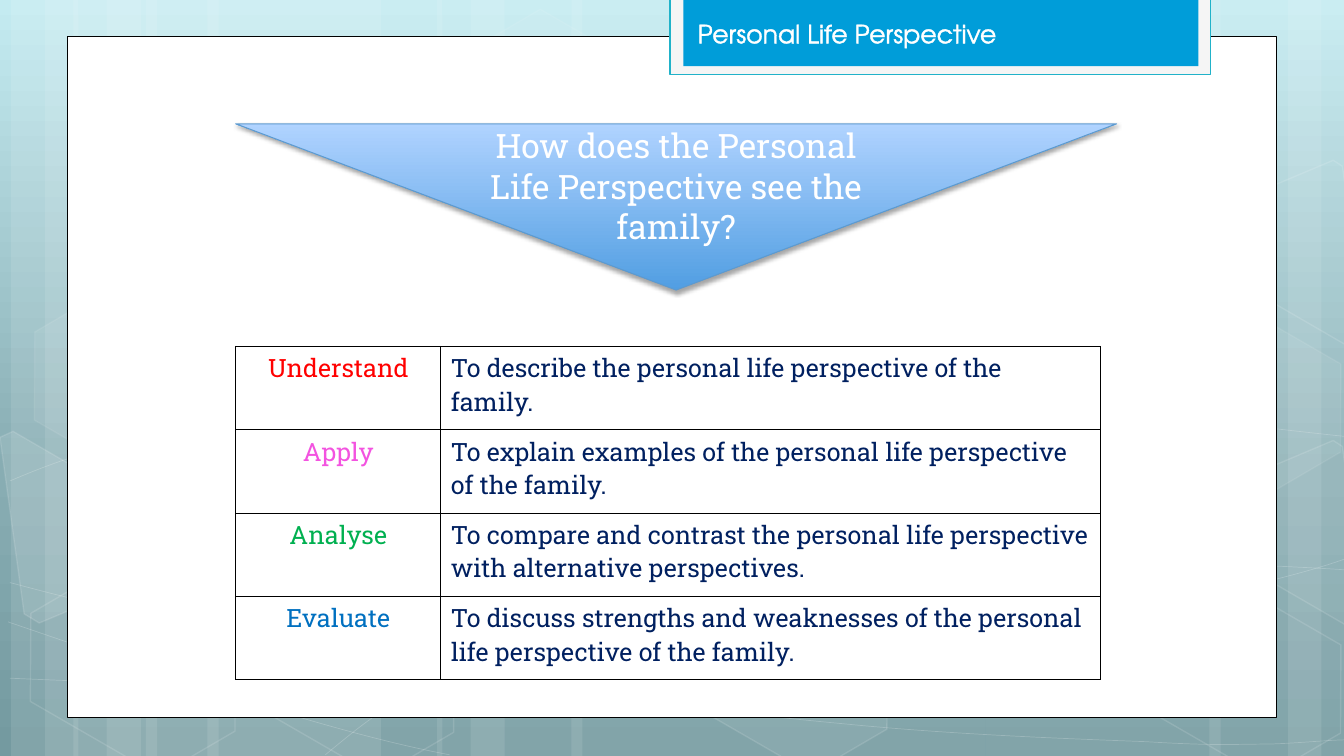
import lxml.etree
import pptx
import pptx.dml.color
import pptx.enum.shapes
import pptx.enum.text
import pptx.oxml.ns
import pptx.util

Cm = pptx.util.Cm
Pt = pptx.util.Pt
qn = pptx.oxml.ns.qn
KIND = pptx.enum.shapes.MSO_SHAPE
ALIGN = pptx.enum.text.PP_ALIGN
ANCHOR = pptx.enum.text.MSO_ANCHOR
SLAB = "Roboto Slab"

BEAMS = [
    (3.68, 5.92), (0.28, 1.7), (1.14, 2.82), (5.23, 5.92), (1.85, 1.7), (2.69, 2.82),
    (24.84, 5.92), (32.46, 1.7), (30.48, 2.82), (14.4, 10.44), (11.02, 1.7), (11.86, 2.82),
]
WAVES = [
    [(0.25, 17.09), (2.08, 17.17), (3.91, 17.25), (6.45, 17.22), (8.99, 17.2),
     (12.12, 17.15), (15.49, 16.89), (18.9, 16.64), (23.7, 16.15), (26.8, 15.67),
     (29.92, 15.19), (33.1, 14.43), (34.11, 14)],
    [(0.25, 12.12), (1.22, 11.71), (2.18, 11.33), (4.11, 10.95), (6.05, 10.57),
     (8.76, 10.01), (11.76, 9.83), (14.78, 9.65), (18.42, 9.63), (22.15, 9.83),
     (25.88, 10.03), (32.08, 10.82), (34.11, 11.02)],
    [(0.2, 15.67), (4.29, 17.07), (8.38, 18.47), (11.33, 19.02)],
    [(0.25, 14.68), (1.3, 14.96), (2.36, 15.24), (4.34, 15.65), (6.3, 16.03),
     (9.25, 16.66), (12.07, 17.09), (14.88, 17.53), (18.47, 17.98), (21.26, 18.24),
     (24.08, 18.52), (27.08, 18.62), (28.88, 18.69), (30.66, 18.8), (31.12, 18.75),
     (32, 18.75), (32.87, 18.72), (33.5, 18.64), (34.11, 18.64)],
    [(8.2, 19.02), (8.81, 18.52), (9.4, 18.01), (10.24, 17.55), (11.05, 17.09),
     (12.19, 16.59), (13.13, 16.23), (14.07, 15.88), (14.66, 15.72), (15.9, 15.47),
     (17.15, 15.21), (19.43, 14.86), (20.6, 14.68), (21.79, 14.5), (21.97, 14.5),
     (23.04, 14.45), (24.08, 14.38), (25.73, 14.3), (26.9, 14.27), (28.07, 14.25),
     (30.02, 14.27), (30.02, 14.27), (30.77, 14.27), (31.51, 14.27), (32.26, 14.27),
     (32.89, 14.3), (33.45, 14.33), (33.76, 14.35), (34.06, 14.38), (33.96, 14.35),
     (34.06, 14.38)],
]
HEXES = [
    (11.3, 0.91, 4, 8), (16.81, 14.96, 6, 12), (0.38, 15.01, None, 12),
    (0.48, 7.92, 7, 8), (5.89, 15.04, None, 12), (28.24, 15.06, None, 12),
    (28.24, 7.98, 7, 8),
]
LEFT = [(0, 11.02), (0.33, 10.87), (2.92, 12.37), (3.23, 14.76), (0.99, 15.7), (0.61, 15.47)]
RIGHT = [(31.37, 12.04), (33.6, 11.1), (33.83, 11.25), (34.47, 15.88), (34.26, 15.95), (31.67, 14.45)]
GOALS = [
    ("Understand", "FF0000", "To describe the personal life perspective of the family."),
    ("Apply", "F353E0", "To explain examples of the personal life perspective of the family."),
    ("Analyse", "00B050", "To compare and contrast the personal life perspective with alternative perspectives."),
    ("Evaluate", "0070C0", "To discuss strengths and weaknesses of the personal life perspective of the family."),
]


def put(item, vals):
    for name, val in vals.items():
        setattr(item, name, val)


def hue(code):
    return pptx.dml.color.RGBColor.from_string(code)


def node(top, tag, **vals):
    return lxml.etree.SubElement(top, qn(tag), {k: str(v) for k, v in vals.items()})


def stroke(top, tag, code, width):
    line = node(top, tag, w=Pt(width))
    node(node(line, "a:solidFill"), "a:srgbClr", val=code)
    return line


def tint(fill, code, alpha=100):
    if code is None or alpha is None:
        fill.background()
        return
    fill.solid()
    fill.fore_color.rgb = hue(code)
    if alpha < 100:
        node(fill._xPr.find(qn("a:solidFill")).find(qn("a:srgbClr")), "a:alpha", val=alpha * 1000)


def blend(fill, stops, angle):
    fill.gradient()
    fill.gradient_angle = angle
    band = fill.gradient_stops[0]._gs.getparent()
    for stop in list(band):
        band.remove(stop)
    for spot, code in stops:
        node(node(band, "a:gs", pos=spot * 1000), "a:srgbClr", val=code)


def style(shape, code, alpha=100, edge=None, width=1, clear=100):
    shape.shadow.inherit = False
    tint(shape.fill, code, alpha)
    tint(shape.line.fill, edge, clear)
    if edge:
        shape.line.width = Pt(width)
    return shape


def block(slide, kind, box, *look):
    return style(slide.shapes.add_shape(kind, *map(Cm, box)), *look)


def trace(slide, dots, close, *look):
    dots = [(Cm(x), Cm(y)) for x, y in dots]
    pen = slide.shapes.build_freeform(*dots[0])
    pen.add_line_segments(dots[1:], close=close)
    return style(pen.convert_to_shape(), *look)


def bend(shape):
    legs = list(shape._element.iter(qn("a:lnTo")))
    track = legs[0].getparent()
    for i in range(0, len(legs), 3):
        arc = node(track, "a:cubicBezTo")
        for leg in legs[i:i + 3]:
            arc.append(leg[0])
            track.remove(leg)


def write(frame, text, face, size, code, align):
    para = frame.paragraphs[0]
    para.alignment = align
    run = para.add_run()
    run.text = text
    put(run.font, {"name": face, "size": Pt(size), "bold": False})
    run.font.color.rgb = hue(code)
    return run


def scene(slide):
    blend(slide.background.fill, [(0, "C4EBF1"), (62, "88ADB3"), (100, "749AA0")], 270)
    for left, width in BEAMS:
        block(slide, KIND.RECTANGLE, (left, 0, width, 19.05), "FFFFFF", 10)
    for knots in WAVES:
        bend(trace(slide, knots, False, None, 100, "FFFFFF", 0.5, 20))
    for left, top, alpha, clear in HEXES:
        tile = block(slide, KIND.HEXAGON, (left, top, 5.94, 3.86), "FFFFFF", alpha, "FFFFFF", 1, clear)
        tile.rotation = 30
        tile.adjustments[0] = 0.285
    high = [(x, y - 7.06) for x, y in RIGHT]
    for dots, alpha in ((LEFT, 10), (RIGHT, 4), (high, None)):
        trace(slide, dots, True, "FFFFFF", alpha, "FFFFFF", 1, 12)


def panel(slide):
    block(slide, KIND.RECTANGLE, (1.7, 0.91, 30.47, 17.18), "FFFFFF", 100, "000000", 0.5)
    block(slide, KIND.RECTANGLE, (16.89, -0.05, 13.62, 1.93), "F5F5F5", 100, "21B2C9", 1.25)
    block(slide, KIND.RECTANGLE, (17.22, -0.05, 12.98, 1.72), "009DD9")


def head(slide):
    title = slide.shapes.title
    slide.shapes._spTree.append(title._element)
    put(title, {"left": Cm(17.33), "top": Cm(0.33), "width": Cm(9.4), "height": Cm(1.02)})
    put(title.text_frame, {"word_wrap": True, "vertical_anchor": ANCHOR.TOP,
                           "auto_size": pptx.enum.text.MSO_AUTO_SIZE.NONE})
    run = write(title.text_frame, "Personal Life Perspective", "TeX Gyre Adventor", 18, "FFFFFF", ALIGN.LEFT)
    props = run._r.get_or_add_rPr()
    props.insert(0, stroke(props, "a:ln", "FFFFFF", 1.45))


def query(slide):
    shape = block(slide, KIND.FLOWCHART_MERGE, (5.94, 3.12, 22.2, 4.19), "519EE2", 100, "5D9ACF", 0.75)
    blend(shape.fill, [(0, "519EE2"), (100, "B0D3FF")], 90)
    cast = node(shape._element.spPr.find(qn("a:effectLst")), "a:outerShdw",
                blurRad=Pt(3.1), dist=Pt(1.8), dir=5400000, rotWithShape=0)
    node(node(cast, "a:srgbClr", val="000000"), "a:alpha", val=35000)
    put(shape.text_frame, {"word_wrap": True, "vertical_anchor": ANCHOR.TOP,
                           "margin_top": Cm(0.04), "margin_bottom": 0})
    write(shape.text_frame, "How does the Personal Life Perspective see the family?",
          SLAB, 24, "FFFFFF", ALIGN.CENTER)


def fill_cell(cell, text, code, align):
    props = cell._tc.get_or_add_tcPr()
    for side in "LRTB":
        stroke(props, "a:ln" + side, "000000", 1)
    tint(cell.fill, "FFFFFF")
    write(cell.text_frame, text, SLAB, 18, code, align)


def goals(slide):
    widths = (5.17, 16.63)
    box = (5.94, 8.73, sum(widths), 2.1 * len(GOALS))
    table = slide.shapes.add_table(len(GOALS), 2, *map(Cm, box)).table
    put(table, {"first_row": False, "horz_banding": False})
    for col, width in zip(table.columns, widths):
        col.width = Cm(width)
    for row, (level, code, goal) in enumerate(GOALS):
        fill_cell(table.cell(row, 0), level, code, ALIGN.CENTER)
        fill_cell(table.cell(row, 1), goal, "002060", ALIGN.LEFT)
    table.cell(0, 1).margin_right = Cm(0.6)


def main():
    deck = pptx.Presentation()
    put(deck, {"slide_width": Cm(33.87), "slide_height": Cm(19.05)})
    slide = deck.slides.add_slide(deck.slide_layouts[5])
    scene(slide)
    panel(slide)
    head(slide)
    query(slide)
    goals(slide)
    deck.save("out.pptx")


if __name__ == "__main__":
    main()
